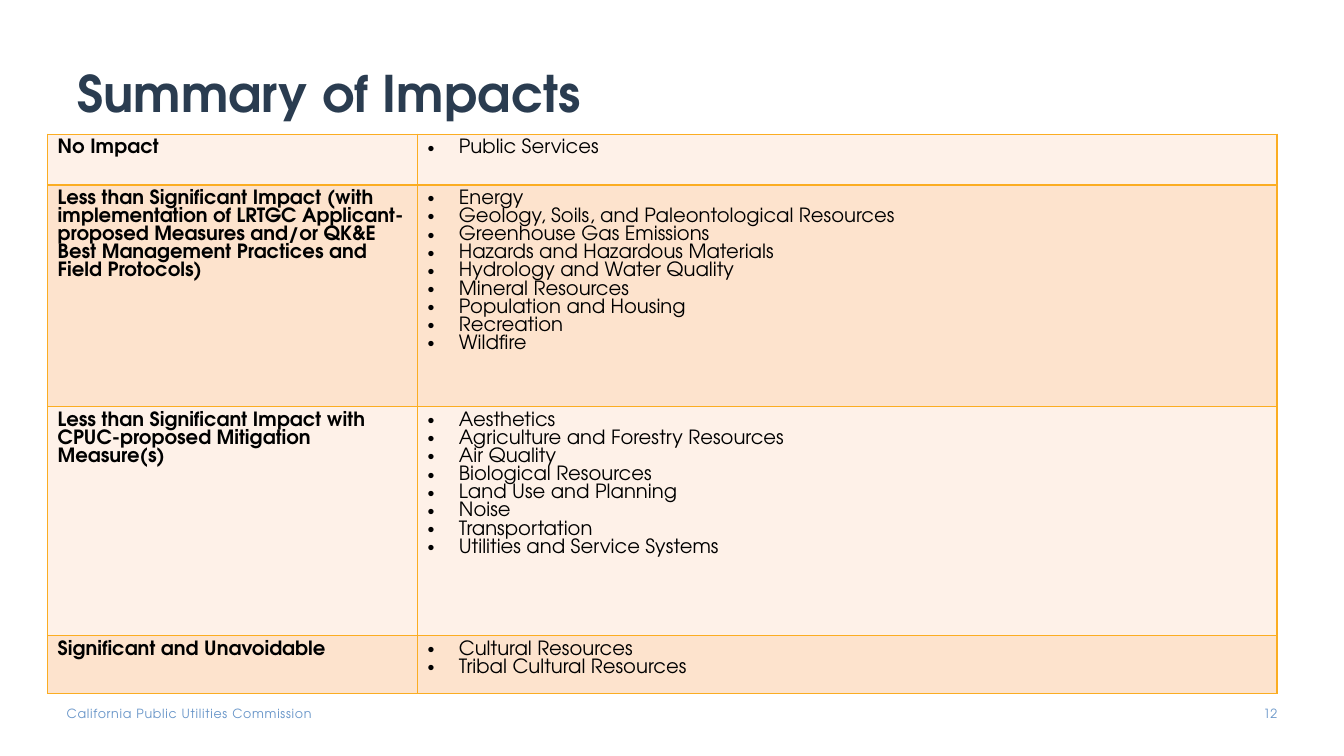
from pptx import Presentation
from pptx.dml.color import RGBColor
from pptx.enum.text import MSO_ANCHOR, PP_ALIGN
from pptx.oxml.ns import qn
from pptx.util import Cm, Pt
from lxml import etree

TOP = MSO_ANCHOR.TOP
LEFT, RIGHT = PP_ALIGN.LEFT, PP_ALIGN.RIGHT
FONT = "TeX Gyre Adventor"
COLORS = {
    "title": "2A3C50",
    "footer": "6996C9",
    "text": "000000",
    "border": "FBAD22",
    "light": "FEF1E8",
    "dark": "FDE3CD",
}
BORDER_SIDES = ("a:lnL", "a:lnR", "a:lnT", "a:lnB")
NO_MARGINS = {"margin_left": 0, "margin_right": 0, "margin_top": 0, "margin_bottom": 0}
COLUMN_WIDTHS = (9.32, 21.66)

IMPACTS = [
    ("No Impact", 1.28, ["Public Services"]),
    (
        "Less than Significant Impact (with implementation of LRTGC Applicant-proposed "
        "Measures and/or QK&E Best Management Practices and Field Protocols)",
        5.59,
        [
            "Energy",
            "Geology, Soils, and Paleontological Resources",
            "Greenhouse Gas Emissions",
            "Hazards and Hazardous Materials",
            "Hydrology and Water Quality",
            "Mineral Resources",
            "Population and Housing",
            "Recreation",
            "Wildfire",
        ],
    ),
    (
        "Less than Significant Impact with CPUC-proposed Mitigation Measure(s)",
        5.77,
        [
            "Aesthetics",
            "Agriculture and Forestry Resources",
            "Air Quality",
            "Biological Resources",
            "Land Use and Planning",
            "Noise",
            "Transportation",
            "Utilities and Service Systems",
        ],
    ),
    ("Significant and Unavoidable", 1.46, ["Cultural Resources", "Tribal Cultural Resources"]),
]


def apply(target, values):
    for name, value in values.items():
        setattr(target, name, value)


class SlideBuilder:
    def __init__(self, slide):
        self.slide = slide

    def paragraph(self, paragraph, text, size, color, bold=False, **layout):
        apply(paragraph, layout)
        run = paragraph.add_run()
        run.text = text
        apply(run.font, {"name": FONT, "size": Pt(size), "bold": bold})
        run.font.color.rgb = RGBColor.from_string(COLORS[color])
        return run

    def title(self, text, left, top, width, height):
        heading = self.slide.shapes.title
        apply(heading, {"left": Cm(left), "top": Cm(top), "width": Cm(width), "height": Cm(height)})
        apply(heading.text_frame, {"vertical_anchor": TOP, "word_wrap": True})
        self.paragraph(heading.text_frame.paragraphs[0], text, 36, "title", True,
                       alignment=LEFT, line_spacing=0.9)

    def footer(self, text, left, top, width, height, alignment=LEFT, tracking=0):
        frame = self.slide.shapes.add_textbox(Cm(left), Cm(top), Cm(width), Cm(height)).text_frame
        apply(frame, {**NO_MARGINS, "word_wrap": True})
        run = self.paragraph(frame.paragraphs[0], text, 9, "footer", alignment=alignment)
        run.font._element.set("spc", str(tracking))

    def bullet(self, paragraph, text):
        properties = paragraph._p.get_or_add_pPr()
        properties.set("marL", str(Cm(0.79)))
        properties.set("indent", str(-Cm(0.79)))
        etree.SubElement(properties, qn("a:buFont"), typeface="Arial")
        etree.SubElement(properties, qn("a:buChar"), char="•")
        self.paragraph(paragraph, text, 14, "text")

    def style_cell(self, cell, fill):
        properties = cell._tc.get_or_add_tcPr()
        for side in BORDER_SIDES:
            line = etree.SubElement(properties, qn(side), w=str(Pt(1)))
            solid = etree.SubElement(line, qn("a:solidFill"))
            etree.SubElement(solid, qn("a:srgbClr"), val=COLORS["border"])
        cell.fill.solid()
        cell.fill.fore_color.rgb = RGBColor.from_string(COLORS[fill])

    def impact_table(self, impacts, left, top):
        table = self.slide.shapes.add_table(
            len(impacts), len(COLUMN_WIDTHS), Cm(left), Cm(top),
            Cm(sum(COLUMN_WIDTHS)), Cm(sum(height for _, height, _ in impacts)),
        ).table
        apply(table, {"first_row": False, "horz_banding": False})
        for column, width in zip(table.columns, COLUMN_WIDTHS):
            column.width = Cm(width)
        for index, (level, height, resources) in enumerate(impacts):
            table.rows[index].height = Cm(height)
            level_cell, resource_cell = table.rows[index].cells
            for cell in (level_cell, resource_cell):
                self.style_cell(cell, ("light", "dark")[index % 2])
            self.paragraph(level_cell.text_frame.paragraphs[0], level, 14, "text", True)
            frame = resource_cell.text_frame
            for position, resource in enumerate(resources):
                self.bullet(frame.add_paragraph() if position else frame.paragraphs[0], resource)


def main():
    presentation = Presentation()
    apply(presentation, {"slide_width": Cm(33.87), "slide_height": Cm(19.05)})
    builder = SlideBuilder(presentation.slides.add_slide(presentation.slide_layouts[5]))
    builder.title("Summary of Impacts", 1.7, 1.6, 29.21, 2.18)
    builder.impact_table(IMPACTS, 1.2, 3.38)
    builder.footer("California Public Utilities Commission", 1.68, 17.78, 8.15, 0.38, tracking=50)
    builder.footer("12", 31.12, 17.78, 1.07, 0.51, RIGHT)
    presentation.save("out.pptx")


if __name__ == "__main__":
    main()
